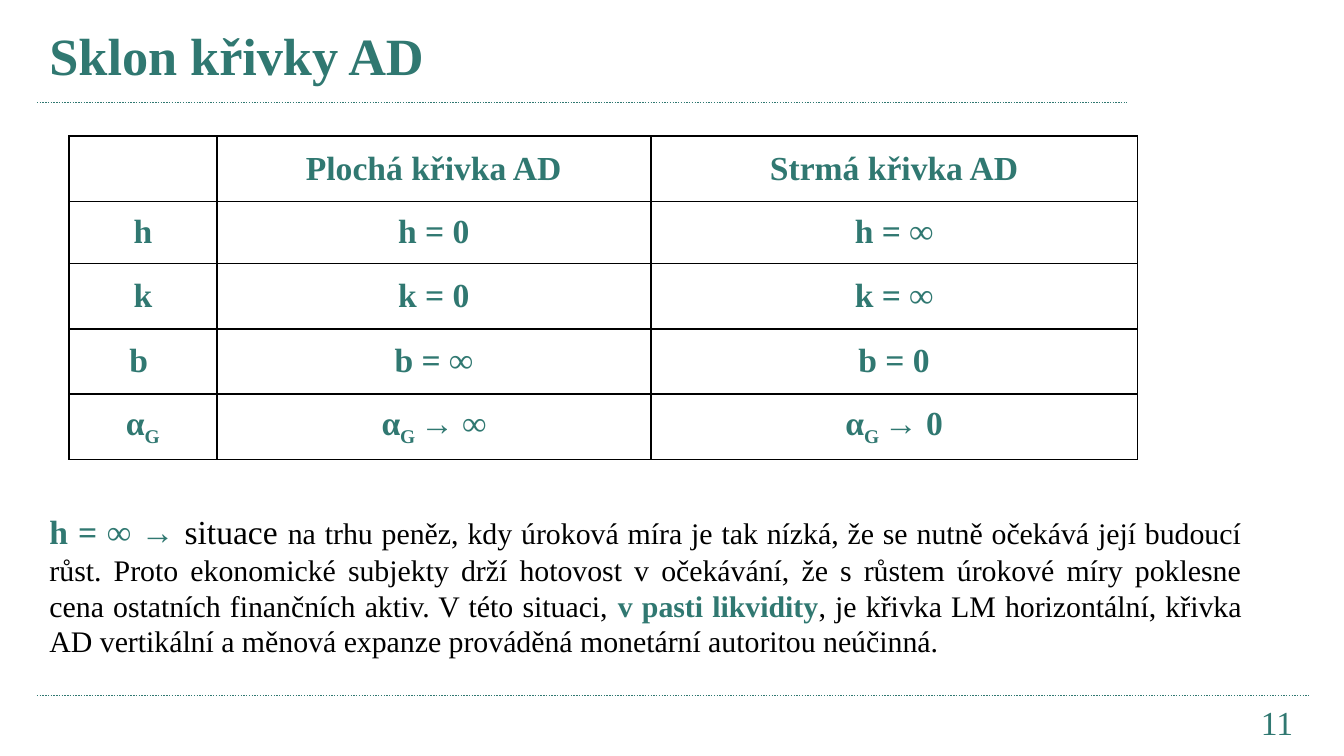
import pptx
import pptx.dml.color
import pptx.enum.dml
import pptx.enum.shapes
import pptx.enum.text
import pptx.oxml
import pptx.oxml.ns
import pptx.util

ALIGN = pptx.enum.text.PP_ALIGN
WIDTH = pptx.util.Inches(10)
HEIGHT = WIDTH * 9 // 16

THEME = {
    "font": "Times New Roman",
    "teal": "307871",
    "black": "000000",
    "rule_width": 0.75,
    "border_width": 1,
    "styles": {
        "title": {"size": 28, "color": "teal", "bold": True},
        "strong": {"size": 18, "color": "teal", "bold": True},
        "number": {"size": 18, "color": "teal", "bold": False},
        "lead": {"size": 18, "color": "black", "bold": False},
        "body": {"size": 16, "color": "black", "bold": False},
        "term": {"size": 16, "color": "teal", "bold": True},
        "sub": {"size": 18, "color": "teal", "bold": True, "baseline": -25000},
    },
}

# Percent of the slide's width and height
LEFT, TEXT_LEFT, TEXT_WIDTH = 2.75, 2.7, 90.7
COLUMNS = [11, 32.3, 36.2]
ROWS = [8.65, 8.2, 8.65, 8.65, 8.65]

CELLS = [
    ["", "Plochá křivka AD", "Strmá křivka AD"],
    ["h", "h = 0", "h = ∞"],
    ["k", "k = 0", "k = ∞"],
    ["b ", "b = ∞", "b = 0"],
    ["α_G", "α_G → ∞", "α_G → 0"],
]

EXPLANATION = [
    ("h = ∞ → ", "strong"),
    ("situace ", "lead"),
    ("na trhu peněz, kdy úroková míra je tak nízká, že se nutně očekává její "
     "budoucí růst. Proto ekonomické subjekty drží hotovost v očekávání, že "
     "s růstem úrokové míry poklesne cena ostatních finančních aktiv. "
     "V této situaci, ", "body"),
    ("v pasti likvidity", "term"),
    (", je křivka LM horizontální, křivka AD vertikální a měnová expanze "
     "prováděná monetární autoritou neúčinná.", "body"),
]


def across(share):
    return int(WIDTH * share / 100)


def down(share):
    return int(HEIGHT * share / 100)


def rgb(name):
    return pptx.dml.color.RGBColor.from_string(THEME[name])


def add_runs(p, runs, align):
    p.alignment = align
    for text, style in runs:
        r = p.add_run()
        r.text = text
        look = THEME["styles"][style]
        font = {"name": THEME["font"], "size": pptx.util.Pt(look["size"]),
                "bold": look["bold"]}
        for key, value in font.items():
            setattr(r.font, key, value)
        r.font.color.rgb = rgb(look["color"])
        if "baseline" in look:
            r.font._element.set("baseline", str(look["baseline"]))


def symbol_runs(text):
    """Split a cell's text so that the letter after "_" becomes a subscript."""
    base, mark, rest = text.partition("_")
    if not mark:
        return [(text, "strong")] if text else []
    return [(base, "strong"), (rest[:2], "sub")] + symbol_runs(rest[2:])


def add_text(s, x, y, w, h, runs, align=ALIGN.LEFT):
    sp = s.shapes.add_textbox(across(x), down(y), across(w), down(h))
    sp.text_frame.word_wrap = True
    add_runs(sp.text_frame.paragraphs[0], runs, align)


def add_rule(s, y, right):
    rule = s.shapes.add_connector(
        pptx.enum.shapes.MSO_CONNECTOR.STRAIGHT,
        across(LEFT), down(y), across(right), down(y))
    rule.line.color.rgb = rgb("teal")
    rule.line.width = pptx.util.Pt(THEME["rule_width"])
    rule.line.dash_style = pptx.enum.dml.MSO_LINE.ROUND_DOT
    rule._element.spPr.append(pptx.oxml.parse_xml(
        f"<a:effectLst {pptx.oxml.ns.nsdecls('a')}/>"))


def add_borders(cell):
    tc_pr = cell._tc.get_or_add_tcPr()
    width = pptx.util.Pt(THEME["border_width"])
    for i, side in enumerate(("lnL", "lnR", "lnT", "lnB")):
        tc_pr.insert(i, pptx.oxml.parse_xml(
            f'<a:{side} {pptx.oxml.ns.nsdecls("a")} w="{width}"><a:solidFill>'
            f'<a:srgbClr val="{THEME["black"]}"/></a:solidFill></a:{side}>'))


def add_curve_table(s, x, y):
    table = s.shapes.add_table(
        len(ROWS), len(COLUMNS), across(x), down(y),
        across(sum(COLUMNS)), down(sum(ROWS))).table
    table.first_row = table.horz_banding = False
    for column, share in zip(table.columns, COLUMNS):
        column.width = across(share)
    inset = pptx.util.Inches(0.07)
    layout = {"margin_left": inset, "margin_right": inset,
              "margin_top": 0, "margin_bottom": 0,
              "vertical_anchor": pptx.enum.text.MSO_ANCHOR.MIDDLE}
    for row, share, texts in zip(table.rows, ROWS, CELLS):
        row.height = down(share)
        for cell, text in zip(row.cells, texts):
            for key, value in layout.items():
                setattr(cell, key, value)
            cell.fill.background()
            add_borders(cell)
            add_runs(cell.text_frame.paragraphs[0], symbol_runs(text),
                     ALIGN.CENTER)


def main():
    prs = pptx.Presentation()
    prs.slide_width, prs.slide_height = WIDTH, HEIGHT
    s = prs.slides.add_slide(prs.slide_layouts[6])
    add_rule(s, 13.6, 83.85)
    add_rule(s, 92, 97.45)
    add_text(s, TEXT_LEFT, 2.2, TEXT_WIDTH, 10,
             [("Sklon křivky AD", "title")])
    add_text(s, 85.4, 92, 11.8, 5.3, [("11", "number")], ALIGN.RIGHT)
    add_curve_table(s, 5.13, 18)
    add_text(s, TEXT_LEFT, 66.75, TEXT_WIDTH, 21.5, EXPLANATION,
             ALIGN.JUSTIFY)
    prs.save("out.pptx")


if __name__ == "__main__":
    main()
